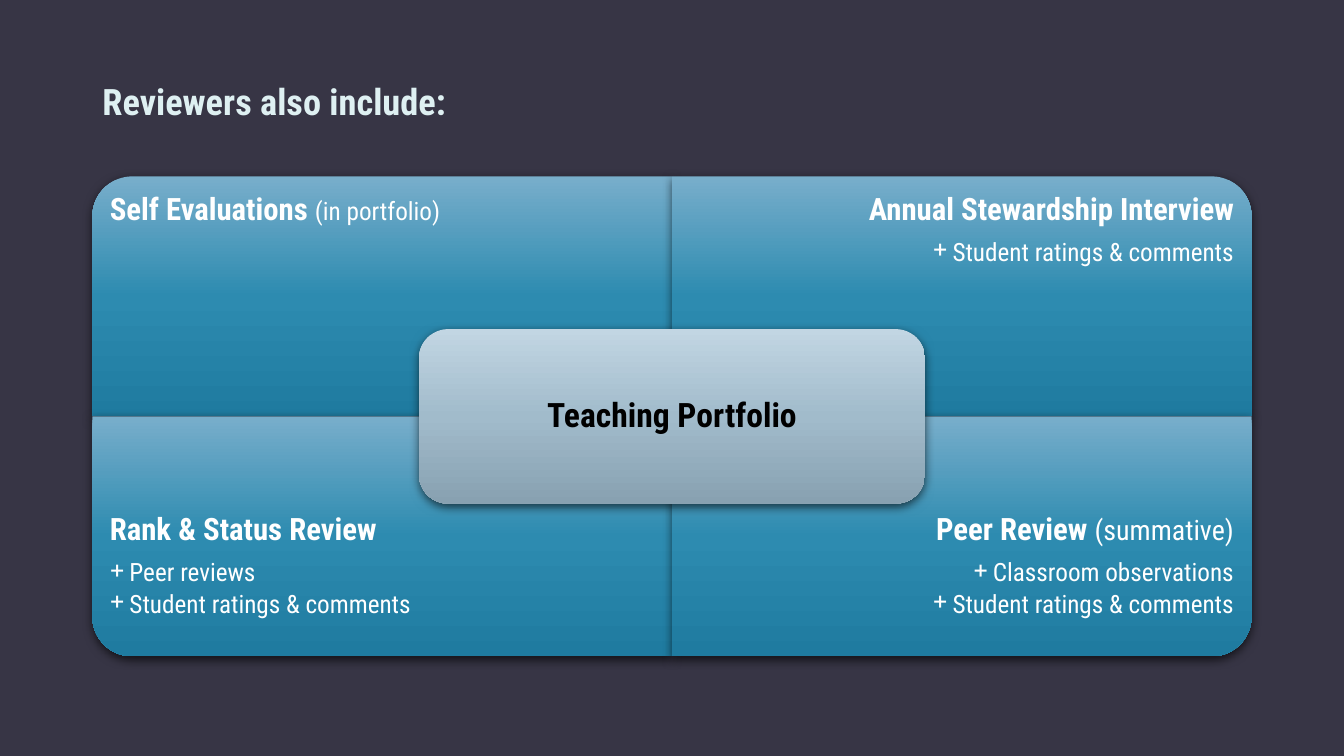
import math

import pptx
import pptx.dml.color
import pptx.enum.shapes
import pptx.enum.text
import pptx.oxml.ns
import pptx.util
from lxml import etree

Pt = pptx.util.Pt
qn = pptx.oxml.ns.qn
ALIGN = pptx.enum.text.PP_ALIGN
ANCHOR = pptx.enum.text.MSO_ANCHOR

FONT = "Roboto Condensed"
COLORS = {"background": "373545", "title": "DEF0F2", "text": "FFFFFF",
          "center_text": "000000", "shadow": "000000"}
QUADRANT_GRADIENT = ["78AECB", "2D8BB0", "1F7BA0"]
CENTER_GRADIENT = ["C2D6E3", "A1BBCB", "88A1B1"]

TITLE = "Reviewers also include:"
CENTER = "Teaching Portfolio"
# column side, row side, heading, (note, note size), bullets
QUADRANTS = [
    (-1, -1, "Self Evaluations", ("(in portfolio)", 18), []),
    (1, -1, "Annual Stewardship Interview", None, ["Student ratings & comments"]),
    (-1, 1, "Rank & Status Review", None,
     ["Peer reviews", "Student ratings & comments"]),
    (1, 1, "Peer Review", ("(summative)", 20),
     ["Classroom observations", "Student ratings & comments"]),
]

SLIDE_W, SLIDE_H = 960, 540
MID_X, MID_Y = 480, 297.4
QUAD_W, QUAD_H, RADIUS = 414, 171.4, 28.5
CENTER_W, CENTER_H = 361.4, 124.6
INSET, INNER_INSET = 12.5, 55.5
ARC_STEPS = 24


def rgb(value):
    return pptx.dml.color.RGBColor.from_string(value)


def style_shape(sp, gradient):
    """Give a shape a top-to-bottom gradient, no outline and a soft shadow."""
    sp.fill.gradient()
    sp.fill.gradient_angle = 270
    sp.line.fill.background()
    sp.shadow.inherit = False
    props = sp._element.spPr
    stops = props.find(".//" + qn("a:gsLst"))
    stops.clear()
    for i, color in enumerate(gradient):
        stop = etree.SubElement(stops, qn("a:gs"), pos=str(i * 50000))
        etree.SubElement(stop, qn("a:srgbClr"), val=color)
    shadow = etree.SubElement(
        props.find(qn("a:effectLst")), qn("a:outerShdw"), blurRad=str(Pt(7)),
        dist=str(Pt(2.2)), dir="5400000", algn="ctr", rotWithShape="0")
    color = etree.SubElement(shadow, qn("a:srgbClr"), val=COLORS["shadow"])
    etree.SubElement(color, qn("a:alpha"), val="63000")


def set_frame(tf, anchor, top, bottom):
    tf.word_wrap = True
    tf.vertical_anchor = anchor
    tf.margin_left = tf.margin_right = Pt(INSET)
    tf.margin_top, tf.margin_bottom = Pt(top), Pt(bottom)


def format_paragraph(p, align, size, color, bold, after):
    p.alignment = align
    p.line_spacing = 0.9
    p.space_before, p.space_after = Pt(0), Pt(after)
    p.font.name, p.font.size, p.font.bold = FONT, Pt(size), bold
    p.font.color.rgb = rgb(color)


def add_bullet(p):
    p.level = 1
    props = p._p.get_or_add_pPr()
    props.set("marL", str(Pt(14)))
    props.set("indent", str(-Pt(14)))
    bullet = etree.Element(qn("a:buChar"), char="+")
    props.find(qn("a:defRPr")).addprevious(bullet)


def quadrant_outline(dx, dy):
    """Corner points from the centre outwards, with the outer corner rounded."""
    outer_x, outer_y = MID_X + dx * QUAD_W, MID_Y + dy * QUAD_H
    points = [(MID_X, MID_Y), (outer_x, MID_Y)]
    for i in range(ARC_STEPS + 1):
        angle = math.pi / 2 * i / ARC_STEPS
        points.append((outer_x - dx * RADIUS * (1 - math.cos(angle)),
                       outer_y - dy * RADIUS * (1 - math.sin(angle))))
    points.append((MID_X, outer_y))
    return [(Pt(x), Pt(y)) for x, y in points]


def add_quadrant(s, dx, dy, heading, note, bullets):
    start, *rest = quadrant_outline(dx, dy)
    builder = s.shapes.build_freeform(*start)
    builder.add_line_segments(rest, close=True)
    sp = builder.convert_to_shape()
    style_shape(sp, QUADRANT_GRADIENT)

    tf = sp.text_frame
    if dy < 0:
        set_frame(tf, ANCHOR.TOP, INSET, INNER_INSET)
    else:
        set_frame(tf, ANCHOR.MIDDLE, INNER_INSET, INSET)
    align = ALIGN.LEFT if dx < 0 else ALIGN.RIGHT
    p = tf.paragraphs[0]
    format_paragraph(p, align, 22, COLORS["text"], True, 9)
    p.add_run().text = heading + (" " if note else "")
    if note:
        r = p.add_run()
        r.text, r.font.size, r.font.bold = note[0], Pt(note[1]), False
    for text in bullets:
        p = tf.add_paragraph()
        p.text = text
        format_paragraph(p, align, 18, COLORS["text"], False, 3)
        add_bullet(p)


def add_center(s):
    sp = s.shapes.add_shape(
        pptx.enum.shapes.MSO_SHAPE.ROUNDED_RECTANGLE,
        Pt(MID_X - CENTER_W / 2), Pt(MID_Y - CENTER_H / 2),
        Pt(CENTER_W), Pt(CENTER_H))
    style_shape(sp, CENTER_GRADIENT)
    set_frame(sp.text_frame, ANCHOR.MIDDLE, INSET, INSET)
    p = sp.text_frame.paragraphs[0]
    p.text = CENTER
    format_paragraph(p, ALIGN.CENTER, 24, COLORS["center_text"], True, 0)


def add_title(s):
    title = s.shapes.title
    title.left, title.top = Pt(66), Pt(52.5)
    title.width, title.height = Pt(635), Pt(39)
    tf = title.text_frame
    set_frame(tf, ANCHOR.MIDDLE, 3.6, 3.6)
    tf.margin_left = tf.margin_right = Pt(7.2)
    p = tf.paragraphs[0]
    p.text = TITLE
    format_paragraph(p, ALIGN.LEFT, 26, COLORS["title"], True, 0)
    p.line_spacing = 1.0


def main():
    prs = pptx.Presentation()
    prs.slide_width, prs.slide_height = Pt(SLIDE_W), Pt(SLIDE_H)
    s = prs.slides.add_slide(prs.slide_layouts.get_by_name("Title Only"))
    s.background.fill.solid()
    s.background.fill.fore_color.rgb = rgb(COLORS["background"])
    add_title(s)
    for quadrant in QUADRANTS:
        add_quadrant(s, *quadrant)
    add_center(s)
    prs.save("out.pptx")


if __name__ == "__main__":
    main()
